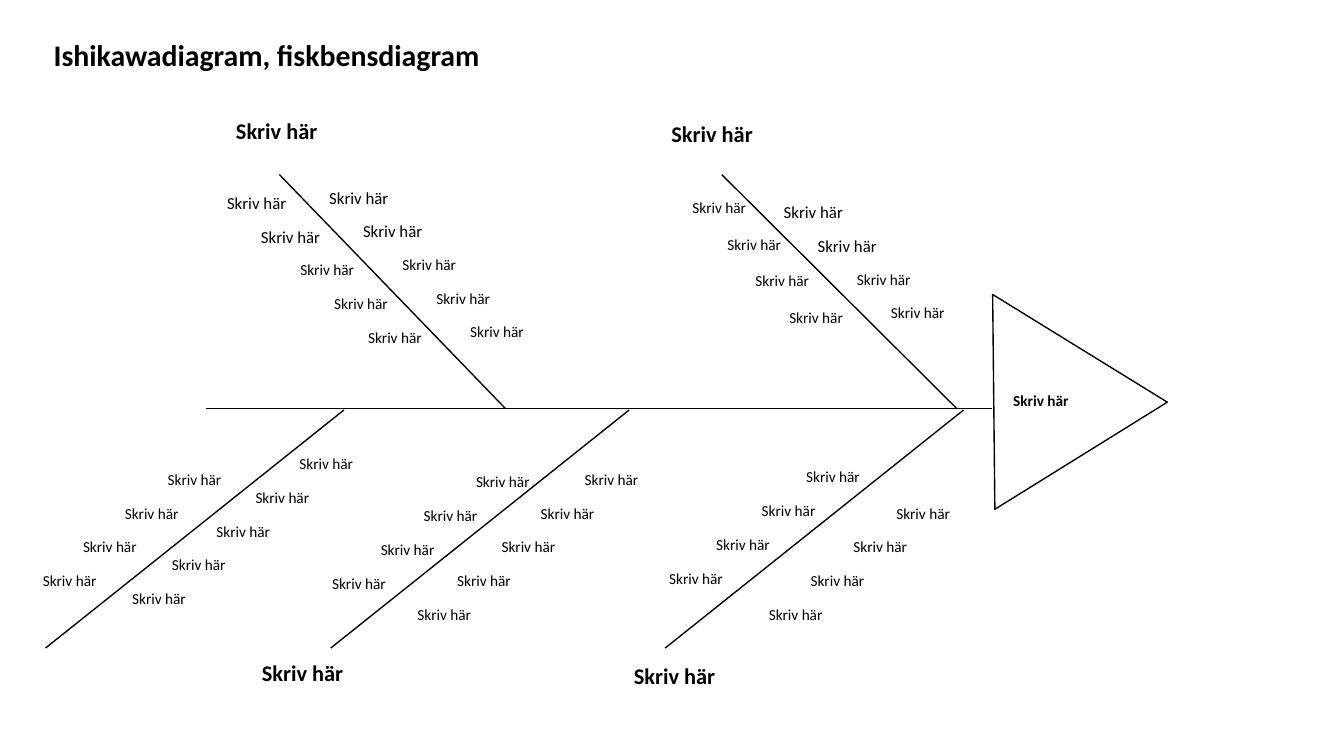
import lxml.etree
import pptx
import pptx.dml.color
import pptx.enum.shapes
import pptx.enum.text
import pptx.oxml.ns
import pptx.util

Cm = pptx.util.Cm
Pt = pptx.util.Pt
ALIGN = pptx.enum.text.PP_ALIGN

BLACK = pptx.dml.color.RGBColor(0x00, 0x00, 0x00)
WHITE = pptx.dml.color.RGBColor(0xFF, 0xFF, 0xFF)
FONT = "Calibri"
LABEL = "Skriv här"
SMALL = 8.2
PITCH = 0.64
CAUSE_W, CAUSE_H = 3.66, 0.58
HEADING_W, HEADING_H = 3.76, 0.71

# Boxes are left, top, width, height in cm.
TITLE_BOX = (0.76, 0.56, 8.79, 1.52)
HEAD_BOX = (18.39, 5.94, 4.06, 3.28)
SPINE_BOX = (3.89, 7.73, 14.86, 0)

# Offsets are measured from the top left corner of the bone's box.
# A column of causes: x offsets, first y offset, pitch, alignment.
DIAGONAL = [i * PITCH for i in range(5)]
UPPER_SIZES = [9, 9, SMALL, SMALL, SMALL]
LOWER_RIGHT = [4.62, 3.79, 3.05, 2.21, 1.46]

UPPER_BONES = [
    {"box": (5.28, 3.3, 4.27, 4.42), "heading": (-1.93, -1.17),
     "columns": [([x - 3.35 for x in DIAGONAL], 0.25, PITCH, UPPER_SIZES),
                 ([x - 1.42 for x in DIAGONAL], 0.15, PITCH, UPPER_SIZES)]},
    {"box": (13.64, 3.3, 4.44, 4.42), "heading": (-2.06, -1.12),
     "columns": [([-3.02, -2.36, -1.83, -1.19], 0.36, 0.69, [SMALL] * 4),
                 ([x - 1.19 for x in DIAGONAL[:4]], 0.43, PITCH, UPPER_SIZES)]},
]
LOWER_BONES = [
    {"box": (0.86, 7.75, 5.64, 4.5), "heading": None,
     "columns": [([2.13, 1.32, 0.53, -0.23], 0.99, ALIGN.LEFT),
                 (LOWER_RIGHT, 0.69, ALIGN.LEFT)]},
    {"box": (6.25, 7.75, 5.64, 4.5), "heading": (-2.41, 4.62),
     "columns": [([0.28, -0.71, -1.52, -2.44], 1.04, ALIGN.RIGHT),
                 (LOWER_RIGHT, 0.99, ALIGN.LEFT)]},
    {"box": (12.57, 7.75, 5.64, 4.5), "heading": (-1.7, 4.67),
     "columns": [([0.2, -0.64, -1.5, -2.39], 0.94, ALIGN.RIGHT),
                 ([4.19, 3.38, 2.57, 1.78], 1.63, ALIGN.LEFT)]},
]


def format_text(p, size, bold, align):
    p.alignment = align
    for r in p.runs:
        r.font.name = FONT
        r.font.size = Pt(size)
        r.font.bold = bold
        r.font.color.rgb = BLACK


def add_label(s, box, size, bold=False, align=ALIGN.LEFT):
    sp = s.shapes.add_textbox(*map(Cm, box))
    tf = sp.text_frame
    tf.word_wrap = True
    tf.margin_left = tf.margin_right = Cm(0.18)
    tf.margin_top = tf.margin_bottom = Cm(0.09)
    tf.text = LABEL
    p = tf.paragraphs[0]
    format_text(p, size, bold, align)
    return p


def add_line(s, x1, y1, x2, y2, width=0.75):
    line = s.shapes.add_connector(pptx.enum.shapes.MSO_CONNECTOR.STRAIGHT,
                                  Cm(x1), Cm(y1), Cm(x2), Cm(y2))
    line.line.color.rgb = BLACK
    line.line.width = Pt(width)
    lxml.etree.SubElement(line._element.spPr, pptx.oxml.ns.qn("a:effectLst"))


def add_title(s, box):
    sp = s.shapes.title
    sp.left, sp.top, sp.width, sp.height = map(Cm, box)
    tf = sp.text_frame
    tf.text = "Ishikawadiagram, fiskbensdiagram"
    tf.vertical_anchor = pptx.enum.text.MSO_ANCHOR.TOP
    format_text(tf.paragraphs[0], 16, True, ALIGN.LEFT)


def add_head(s, box):
    """Draw the fish head, which holds the effect."""
    left, top, width, height = box
    sp = s.shapes.add_shape(pptx.enum.shapes.MSO_SHAPE.ISOSCELES_TRIANGLE,
                            *map(Cm, box))
    sp.adjustments[0] = 0.51
    sp.rotation = 89.4
    sp.shadow.inherit = False
    sp.fill.solid()
    sp.fill.fore_color.rgb = WHITE
    sp.line.color.rgb = BLACK
    sp.line.width = Pt(0.75)
    add_label(s, (left + 0.58, top + 1.37, 2.41, 0.53), SMALL, bold=True)


def add_spine(s, box):
    left, top, width, height = box
    add_line(s, left, top, left + width, top + height, 0.5)


def add_heading(s, box, offset):
    if offset:
        add_label(s, (box[0] + offset[0], box[1] + offset[1],
                      HEADING_W, HEADING_H), 12, True, ALIGN.CENTER)


def add_causes(s, box, xs, y, pitch, sizes, align):
    """Place one column of causes and return its paragraphs."""
    return [add_label(s, (box[0] + x, box[1] + y + i * pitch, CAUSE_W, CAUSE_H),
                      size, align=align)
            for i, (x, size) in enumerate(zip(xs, sizes))]


def add_upper_bone(s, box, heading, columns):
    left, top, width, height = box
    add_line(s, left, top, left + width, top + height)
    add_heading(s, box, heading)
    for xs, y, pitch, sizes in columns:
        add_causes(s, box, xs, y, pitch, sizes, ALIGN.RIGHT)


def add_lower_bone(s, box, heading, columns):
    left, top, width, height = box
    add_line(s, left, top + height, left + width, top)
    add_heading(s, box, heading)
    for xs, y, align in columns:
        for p in add_causes(s, box, xs, y, PITCH, [SMALL] * len(xs), align):
            p.line_spacing = 1.15
            p.space_after = Pt(7.5)


def main():
    prs = pptx.Presentation()
    prs.slide_width, prs.slide_height = Cm(25.4), Cm(14.29)
    s = prs.slides.add_slide(prs.slide_layouts[5])
    add_title(s, TITLE_BOX)
    add_head(s, HEAD_BOX)
    add_spine(s, SPINE_BOX)
    for bone in UPPER_BONES:
        add_upper_bone(s, **bone)
    for bone in LOWER_BONES:
        add_lower_bone(s, **bone)
    prs.save("out.pptx")


if __name__ == "__main__":
    main()
